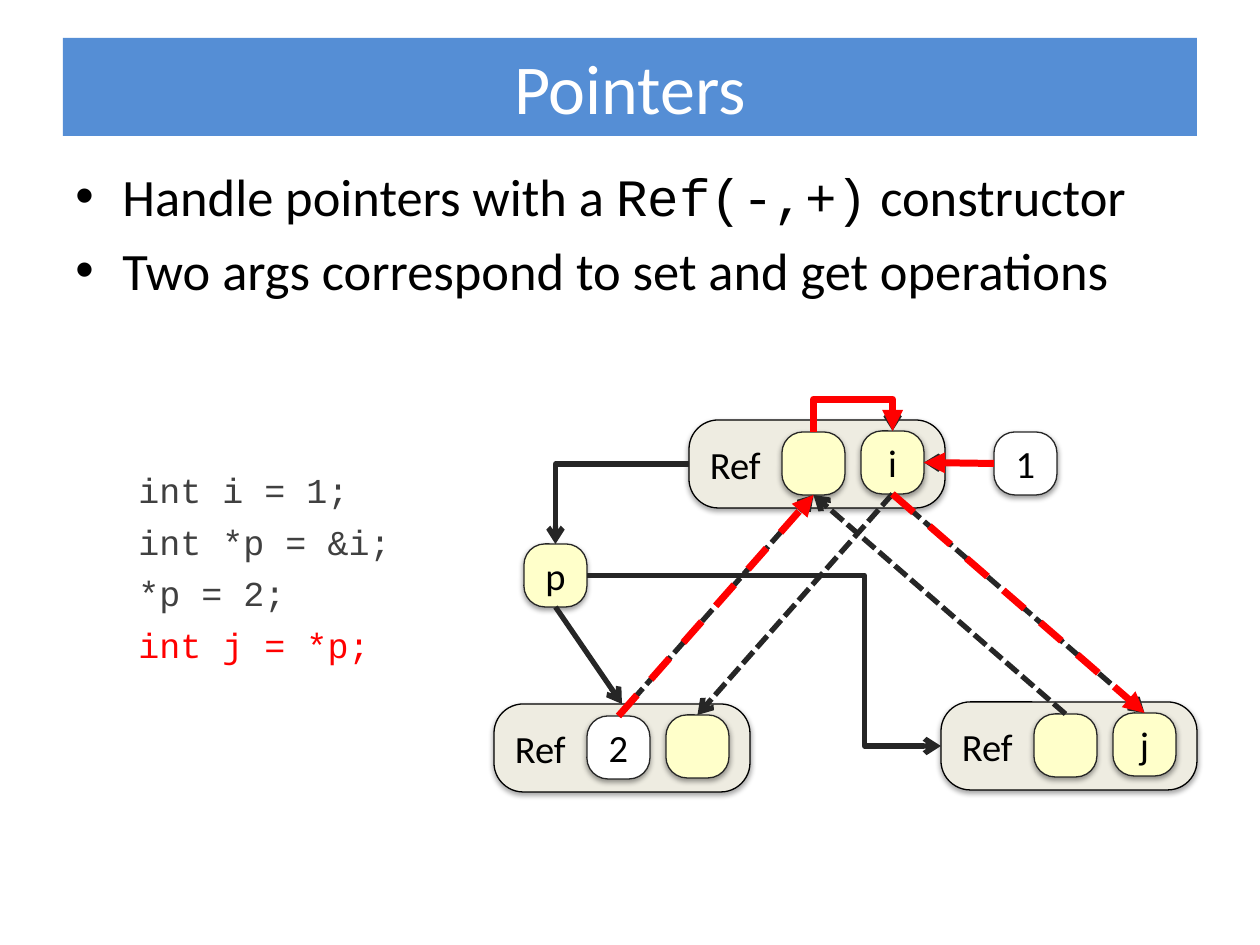
"""Builds the Pointers slide: a code listing beside a graph of Ref nodes."""
from lxml import etree
from pptx import Presentation, util as u
from pptx.dml.color import RGBColor
from pptx.enum import dml, shapes, text
from pptx.oxml.ns import qn

SANS, MONO = "Calibri", "Courier New"
BLACK, DARK, GREY, RED = "000000", "262626", "404040", "FF0000"
WHITE, YELLOW, BEIGE, BLUE = "FFFFFF", "FFFFCA", "EEECE1", "558ED5"

BULLETS = [
    [("Handle pointers with a ", SANS), ("Ref(-,+)", MONO), (" constructor", SANS)],
    [("Two args correspond to set and get operations", SANS)],
]
CODE = [("int i = 1;", GREY), ("int *p = &i;", GREY), ("*p = 2;", GREY), ("int j = *p;", RED)]

CELL, REF_W, REF_H = 63, 256, 88
SET_AT, GET_AT = (93, 12), (172, 11)
REFS = [  # name, left, top, (set text, fill), (get text, fill)
    ("two", 494, 704, ("2", WHITE), ("", YELLOW)),
    ("j", 941, 702, ("", YELLOW), ("j", YELLOW)),
    ("i", 689, 420, ("", YELLOW), ("i", YELLOW)),
]
CELLS = [("p", 524, 544, "p", YELLOW), ("one", 994, 432, "1", WHITE)]
SITES = {"left": (0, 0.5), "right": (1, 0.5), "top": (0.5, 0), "bottom": (0.5, 1)}

SOLID, DASH, SHORT = None, dml.MSO_LINE.DASH, dml.MSO_LINE.SQUARE_DOT
EDGES = [  # from, to, dash, also red
    (("one", "left"), ("i get", "right"), SOLID, True),
    (("p", "bottom"), ("two", "top"), SOLID, False),
    (("two set", "top"), ("i set", "bottom"), SHORT, True),
    (("j set", "top"), ("i set", "bottom"), SHORT, False),
    (("i get", "bottom"), ("two get", "top"), SHORT, False),
    (("i get", "bottom"), ("j get", "top"), SHORT, True),
]
LOOP_RISE = 33

prs = Presentation()


def px(n):
    return u.Emu(round(n * 914400 / 126))


prs.slide_width, prs.slide_height = px(1260), px(945)
slide = prs.slides.add_slide(prs.slide_layouts[6])
boxes = {}


def rgb(value):
    return RGBColor.from_string(value)


def add_run(p, words, size, font=SANS, color=BLACK):
    r = p.add_run()
    r.text = words
    r.font.size, r.font.name = u.Pt(size), font
    r.font.color.rgb = rgb(color)


def hang(p, before, bullet=None):
    p.space_before = u.Pt(before)
    pPr = p._p.get_or_add_pPr()
    pPr.set("marL", str(px(47)))
    pPr.set("indent", str(-px(47)))
    if bullet:
        etree.SubElement(pPr, qn("a:buFont")).set("typeface", "Arial")
        etree.SubElement(pPr, qn("a:buChar")).set("char", bullet)


def text_box(left, top, width, height, anchor):
    tf = slide.shapes.add_textbox(*map(px, (left, top, width, height))).text_frame
    tf.word_wrap = True
    tf.vertical_anchor = anchor
    return tf


def paragraphs(tf, items):
    for n, item in enumerate(items):
        yield (tf.add_paragraph() if n else tf.paragraphs[0]), item


def add_shadow(sp, alpha):
    effects = etree.SubElement(sp._element.spPr, qn("a:effectLst"))
    shadow = etree.SubElement(effects, qn("a:outerShdw"), blurRad="39370",
                              dist="21590", dir="5400000", rotWithShape="0")
    color = etree.SubElement(shadow, qn("a:srgbClr"), val=BLACK)
    etree.SubElement(color, qn("a:alpha")).set("val", str(alpha * 1000))


def node(name, left, top, width, height, words, fill, line=DARK, alpha=38,
         align=text.PP_ALIGN.CENTER):
    boxes[name] = (left, top, width, height)
    sp = slide.shapes.add_shape(shapes.MSO_SHAPE.ROUNDED_RECTANGLE,
                                *map(px, boxes[name]))
    sp.adjustments[0] = 0.333
    sp.fill.solid()
    sp.fill.fore_color.rgb = rgb(fill)
    sp.line.color.rgb = rgb(line)
    sp.line.width = u.Pt(0.75)
    add_shadow(sp, alpha)
    if words:
        tf = sp.text_frame
        tf.vertical_anchor = text.MSO_ANCHOR.MIDDLE
        tf.paragraphs[0].alignment = align
        add_run(tf.paragraphs[0], words, 22)


def site(name, side):
    left, top, width, height = boxes[name]
    fx, fy = SITES[side]
    return left + width * fx, top + height * fy


def arrow(start, end, color=DARK, dash=SOLID, preset="line", adj=None, rot=0):
    bent = preset != "line"
    kind = shapes.MSO_CONNECTOR.ELBOW if bent else shapes.MSO_CONNECTOR.STRAIGHT
    c = slide.shapes.add_connector(kind, *map(px, (*start, *end)))
    spPr = c._element.spPr
    if bent:
        geom = spPr.find(qn("a:prstGeom"))
        geom.set("prst", preset)
        if adj:
            etree.SubElement(geom.find(qn("a:avLst")), qn("a:gd"), name="adj1",
                             fmla=f"val {round(adj * 100000)}")
        if rot:
            spPr.find(qn("a:xfrm")).set("rot", str(rot * 60000))
    c.line.color.rgb = rgb(color)
    c.line.width = u.Pt(4 if color == RED else 3)
    if dash:
        c.line.dash_style = dash
    head = "triangle" if color == RED else "arrow"
    etree.SubElement(c.line._get_or_add_ln(), qn("a:tailEnd")).set("type", head)
    etree.SubElement(spPr, qn("a:effectLst"))


def loop(color):
    (x1, y1), (x2, y2) = site("i set", "top"), site("i get", "top")
    cx, cy, dx, dy = (x1 + x2) / 2, (y1 + y2) / 2, (y1 - y2) / 2, (x2 - x1) / 2
    arrow((cx + dx, cy + dy), (cx - dx, cy - dy), color,
          preset="bentConnector3", adj=LOOP_RISE / (y1 - y2), rot=90)


title = slide.shapes.add_shape(shapes.MSO_SHAPE.RECTANGLE, *map(px, (63, 38, 1134, 98)))
title.shadow.inherit = False
title.fill.solid()
title.fill.fore_color.rgb = rgb(BLUE)
title.line.fill.background()
title.text_frame.vertical_anchor = text.MSO_ANCHOR.MIDDLE
title.text_frame.paragraphs[0].alignment = text.PP_ALIGN.CENTER
add_run(title.text_frame.paragraphs[0], "Pointers", 40, color=WHITE)

for p, runs in paragraphs(text_box(63, 158, 1134, 178, text.MSO_ANCHOR.TOP), BULLETS):
    hang(p, 6, "•")
    for words, font in runs:
        add_run(p, words, 30, font)

for p, (words, color) in paragraphs(text_box(126, 336, 494, 462, text.MSO_ANCHOR.MIDDLE), CODE):
    hang(p, 5.5)
    add_run(p, words, 20, MONO, color)

for name, left, top, *cells in REFS:
    node(name, left, top, REF_W, REF_H, "Ref", BEIGE, BLACK, 35, text.PP_ALIGN.LEFT)
    for role, (dx, dy), (words, fill) in zip(("set", "get"), (SET_AT, GET_AT), cells):
        node(f"{name} {role}", left + dx, top + dy, CELL, CELL, words, fill)
for name, left, top, words, fill in CELLS:
    node(name, left, top, CELL, CELL, words, fill)

loop(DARK)
arrow(site("i", "left"), site("p", "top"), preset="bentConnector2")
for start, end, dash, _ in EDGES:
    arrow(site(*start), site(*end), dash=dash)
arrow(site("p", "right"), site("j", "left"), preset="bentConnector3", adj=0.784)

loop(RED)
for start, end, dash, is_red in EDGES:
    if is_red:
        arrow(site(*start), site(*end), RED, DASH if dash else SOLID)

prs.save("out.pptx")
